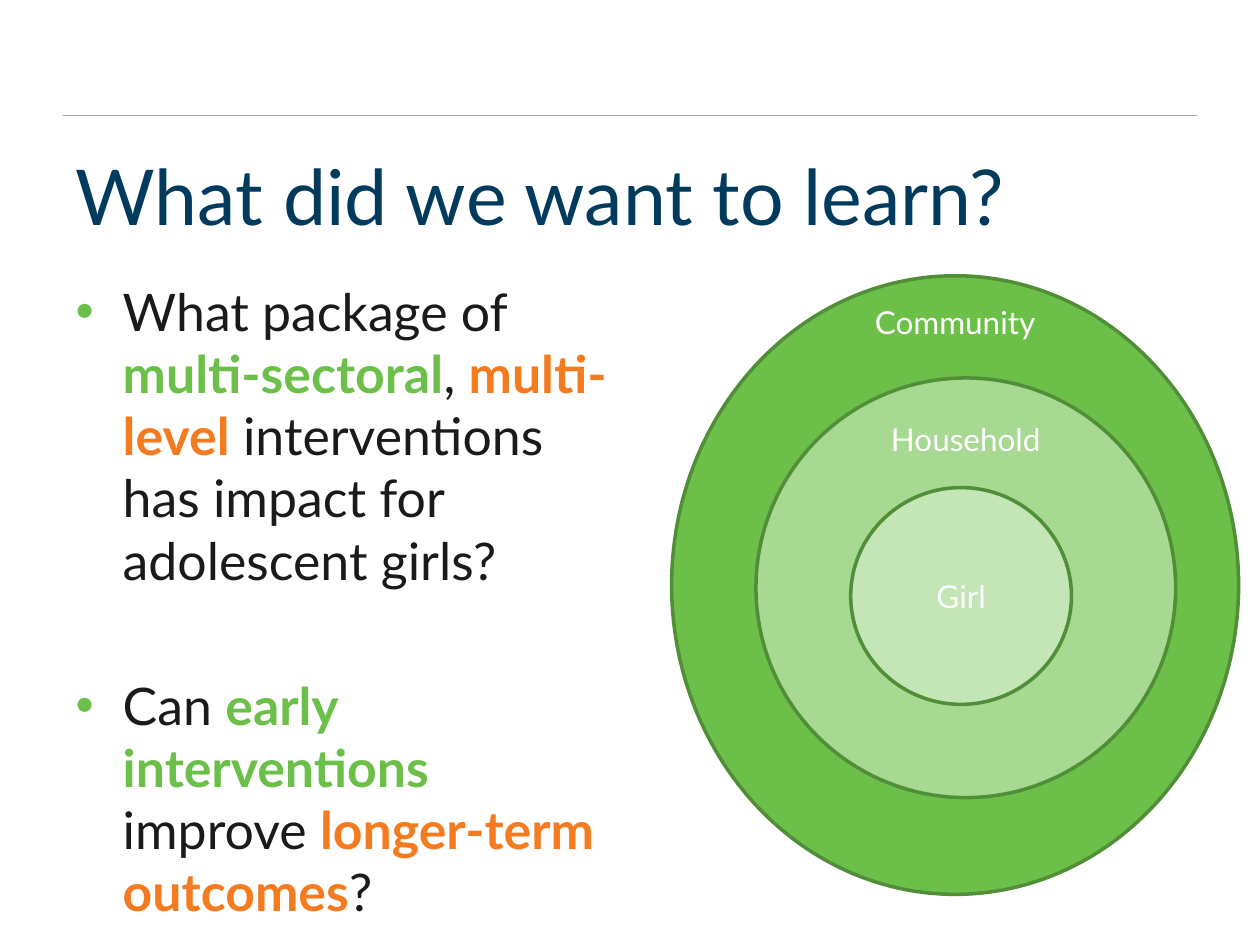
from lxml import etree
from pptx import Presentation
from pptx.dml.color import RGBColor
from pptx.enum.shapes import MSO_CONNECTOR, MSO_SHAPE
from pptx.enum.text import MSO_ANCHOR, MSO_AUTO_SIZE, PP_ALIGN
from pptx.oxml.ns import qn
from pptx.util import Cm, Pt

FONT = "Lato"
COLOURS = {
    "navy": "003A5D", "ink": "1A1A1A", "green": "6CC04A", "orange": "F47B1F",
    "middle": "A7D992", "inner": "C4E6B7", "outline": "508E37",
    "rule": "A6A6A6", "white": "FFFFFF",
}
TITLE = "What did we want to learn?"
QUESTIONS = [
    [("What package of ", "ink"), ("multi-sectoral", "green"), (", ", "ink"),
     ("multi-level", "orange"),
     (" interventions has impact for adolescent girls?", "ink")],
    [("Can ", "ink"), ("early interventions ", "green"), ("improve ", "ink"),
     ("longer-term outcomes", "orange"), ("?", "ink")],
]
# Label, fill, (left, top, width, height) and label centre below the top, in cm
RINGS = [
    ("Community", "green", (13.54, 5.56, 11.43, 12.47), 0.94),
    ("Household", "middle", (15.24, 7.62, 8.46, 8.46), 1.22),
    ("Girl", "inner", (17.15, 9.83, 4.45, 4.37), 2.18),
]
LABEL_WIDTH, LABEL_HEIGHT = 4, 0.8
INDENT = Cm(0.95)


def colour(name):
    return RGBColor.from_string(COLOURS[name])


def set_font(font, size, colour_name):
    font.name, font.size = FONT, Pt(size)
    font.color.rgb = colour(colour_name)


def place(shape, left, top, width, height):
    shape.left, shape.top = Cm(left), Cm(top)
    shape.width, shape.height = Cm(width), Cm(height)


def add_bullet(paragraph):
    properties = paragraph._p.get_or_add_pPr()
    properties.set("marL", str(INDENT))
    properties.set("indent", str(-INDENT))
    bullet_colour = etree.SubElement(properties, qn("a:buClr"))
    etree.SubElement(bullet_colour, qn("a:srgbClr"), val=COLOURS["green"])
    etree.SubElement(properties, qn("a:buFont"), typeface="Arial")
    etree.SubElement(properties, qn("a:buChar"), char="•")


def add_rule(slide):
    rule = slide.shapes.add_connector(
        MSO_CONNECTOR.STRAIGHT, Cm(1.27), Cm(2.33), Cm(24.13), Cm(2.33))
    rule.line.color.rgb = colour("rule")
    rule.line.width = Pt(1)
    etree.SubElement(rule._element.spPr, qn("a:effectLst"))


def fill_title(title):
    place(title, 1.27, 2.33, 22.86, 3.18)
    frame = title.text_frame
    frame.text = TITLE
    frame.vertical_anchor = MSO_ANCHOR.MIDDLE
    frame.auto_size = MSO_AUTO_SIZE.NONE
    frame.paragraphs[0].alignment = PP_ALIGN.LEFT
    set_font(frame.paragraphs[0].font, 44, "navy")


def fill_questions(body):
    place(body, 1.27, 5.51, 11.43, 12.7)
    frame = body.text_frame
    frame.auto_size = MSO_AUTO_SIZE.NONE
    for index, parts in enumerate(QUESTIONS):
        paragraph = frame.add_paragraph() if index else frame.paragraphs[0]
        add_bullet(paragraph)
        paragraph.space_before = Pt(47.4 if index else 0)
        set_font(paragraph.font, 29.6, "ink")
        for text, colour_name in parts:
            run = paragraph.add_run()
            run.text = text
            set_font(run.font, 29.6, colour_name)
            run.font.bold = colour_name != "ink"


def add_ring(slide, label, fill, box, label_offset):
    ring = slide.shapes.add_shape(MSO_SHAPE.OVAL, *map(Cm, box))
    ring.shadow.inherit = False
    ring.fill.solid()
    ring.fill.fore_color.rgb = colour(fill)
    ring.line.color.rgb = colour("outline")
    ring.line.width = Pt(2)

    left, top, width, _ = box
    text_box = slide.shapes.add_textbox(
        Cm(left + (width - LABEL_WIDTH) / 2),
        Cm(top + label_offset - LABEL_HEIGHT / 2),
        Cm(LABEL_WIDTH), Cm(LABEL_HEIGHT))
    frame = text_box.text_frame
    frame.word_wrap = True
    frame.margin_top = frame.margin_bottom = 0
    frame.vertical_anchor = MSO_ANCHOR.MIDDLE
    frame.text = label
    frame.paragraphs[0].alignment = PP_ALIGN.CENTER
    set_font(frame.paragraphs[0].font, 18, "white")


def main():
    presentation = Presentation()
    presentation.slide_width, presentation.slide_height = Cm(25.4), Cm(19.05)
    slide = presentation.slides.add_slide(presentation.slide_layouts[1])
    add_rule(slide)
    fill_title(slide.shapes.title)
    fill_questions(slide.placeholders[1])
    for ring in RINGS:
        add_ring(slide, *ring)
    presentation.save("out.pptx")


if __name__ == "__main__":
    main()
